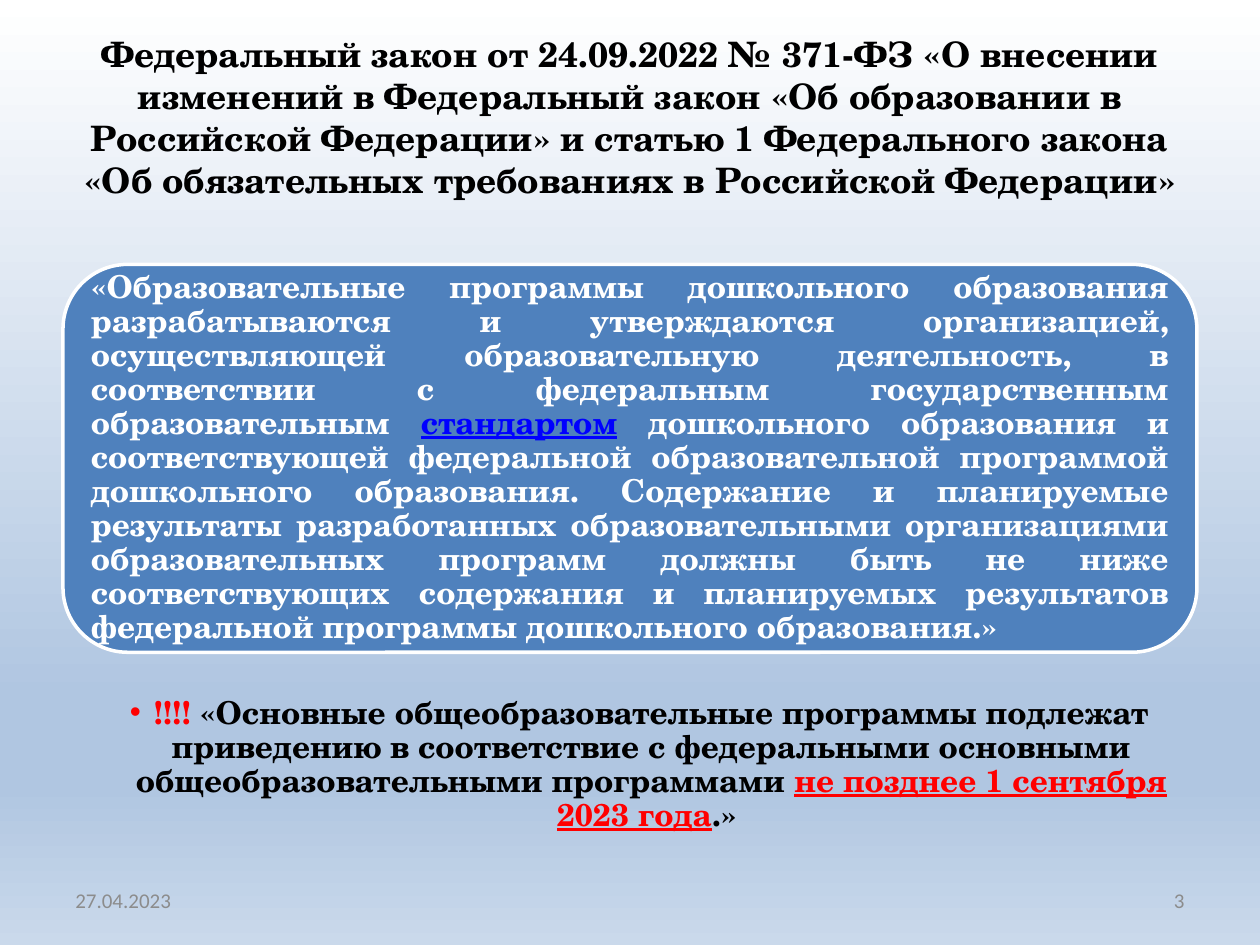
"""Build the slide on the federal law about preschool education programmes."""
from dataclasses import dataclass
from typing import Optional

import lxml.etree
import pptx
import pptx.dml.color
import pptx.enum.shapes
import pptx.enum.text
import pptx.oxml.ns
import pptx.util

Cm = pptx.util.Cm
Pt = pptx.util.Pt
Align = pptx.enum.text.PP_ALIGN
Anchor = pptx.enum.text.MSO_ANCHOR


@dataclass(frozen=True)
class Theme:
    """Colours, fonts and type sizes of the slide."""
    ink: str = "000000"
    white: str = "FFFFFF"
    card: str = "4F81BD"
    link: str = "0000FF"
    alert: str = "FF0000"
    muted: str = "8C8C8C"
    serif: str = "TeX Gyre Schola"
    sans: str = "Calibri"
    title_size: int = 20
    body_size: int = 18
    footer_size: int = 12
    backdrop: tuple = ((0, "FFFFFF"), (74, "B0C6E1"), (83, "B0C6E1"), (100, "CAD9EB"))


THEME = Theme()


@dataclass(frozen=True)
class Piece:
    """A stretch of text in one colour."""
    text: str
    color: str
    underline: bool = False


@dataclass(frozen=True)
class Block:
    """A placed paragraph; lengths in centimetres, insets as left, top, right, bottom."""
    box: tuple[float, float, float, float]
    pieces: tuple[Piece, ...]
    size: int
    align: Align
    font: str = THEME.serif
    bold: bool = True
    anchor: Anchor = Anchor.MIDDLE
    insets: tuple[float, float, float, float] = (0.25, 0.13, 0.25, 0.13)
    spacing: float = 1.0
    fill: Optional[str] = None
    bullet_indent: Optional[float] = None


MARGIN, WIDTH = 1.27, 22.86
FOOTER_TOP, FOOTER_WIDTH, FOOTER_HEIGHT = 17.65, 5.93, 1.01

TITLE = Block(
    (MARGIN, 0.76, WIDTH, 3.18),
    (Piece("Федеральный закон от 24.09.2022 № 371-ФЗ «О внесении изменений в Федеральный "
           "закон «Об образовании в Российской Федерации» и статью 1 Федерального закона "
           "«Об обязательных требованиях в Российской Федерации»", THEME.ink),),
    THEME.title_size, Align.CENTER)

QUOTE = Block(
    (MARGIN, 5.33, WIDTH, 7.82),
    (Piece("«Образовательные программы дошкольного образования разрабатываются и утверждаются "
           "организацией, осуществляющей образовательную деятельность, в соответствии с "
           "федеральным государственным образовательным ", THEME.white),
     Piece("стандартом", THEME.link, True),
     Piece(" дошкольного образования и соответствующей федеральной образовательной программой "
           "дошкольного образования. Содержание и планируемые результаты разработанных "
           "образовательными организациями образовательных программ должны быть не ниже "
           "соответствующих содержания и планируемых результатов федеральной программы "
           "дошкольного образования.»", THEME.white)),
    THEME.body_size, Align.JUSTIFY, insets=(0.18,) * 4, spacing=0.9, fill=THEME.card)

DEADLINE = Block(
    (MARGIN, 13.97, WIDTH, 2.9),
    (Piece("!!!! ", THEME.alert),
     Piece("«Основные общеобразовательные программы подлежат приведению в соответствие с "
           "федеральными основными общеобразовательными программами ", THEME.ink),
     Piece("не позднее 1 сентября 2023 года", THEME.alert, True),
     Piece(".» ", THEME.ink)),
    THEME.body_size, Align.CENTER, anchor=Anchor.TOP, insets=(0.74, 0.08, 0.36, 0.08),
    spacing=0.9, bullet_indent=0.48)


def footer(left: float, text: str, align: Align) -> Block:
    """Describe a small grey footer entry."""
    return Block((left, FOOTER_TOP, FOOTER_WIDTH, FOOTER_HEIGHT), (Piece(text, THEME.muted),),
                 THEME.footer_size, align, font=THEME.sans, bold=False)


BLOCKS = (
    TITLE, QUOTE, DEADLINE,
    footer(MARGIN, "27.04.2023", Align.LEFT),
    footer(MARGIN + WIDTH - FOOTER_WIDTH, "3", Align.RIGHT),
)


def rgb(value: str) -> pptx.dml.color.RGBColor:
    """Turn a hex string into a colour."""
    return pptx.dml.color.RGBColor.from_string(value)


def paint_backdrop(slide: pptx.slide.Slide) -> None:
    """Fill the slide background with the vertical gradient."""
    fill = slide.background.fill
    fill.gradient()
    fill.gradient_angle = 270
    qn = pptx.oxml.ns.qn
    stops = slide.element.find(".//" + qn("a:gsLst"))
    for stop in list(stops):
        stops.remove(stop)
    for percent, color in THEME.backdrop:
        stop = lxml.etree.SubElement(stops, qn("a:gs"), pos=str(percent * 1000))
        lxml.etree.SubElement(stop, qn("a:srgbClr"), val=color)


def add_bullet(paragraph: pptx.text.text._Paragraph, indent: float) -> None:
    """Give the paragraph a hanging round bullet."""
    qn = pptx.oxml.ns.qn
    properties = paragraph._p.get_or_add_pPr()
    properties.set("marL", str(Cm(indent)))
    properties.set("indent", str(-Cm(indent)))
    lxml.etree.SubElement(properties, qn("a:buFont"), typeface="Arial")
    lxml.etree.SubElement(properties, qn("a:buChar"), char="•")


def draw_block(slide: pptx.slide.Slide, block: Block) -> None:
    """Draw a text block, on a rounded card when it has a fill."""
    box = [Cm(length) for length in block.box]
    if block.fill:
        holder = slide.shapes.add_shape(
            pptx.enum.shapes.MSO_SHAPE.ROUNDED_RECTANGLE, *box)
        holder.shadow.inherit = False
        holder.fill.solid()
        holder.fill.fore_color.rgb = rgb(block.fill)
        holder.line.color.rgb = rgb(THEME.white)
        holder.line.width = Pt(2)
    else:
        holder = slide.shapes.add_textbox(*box)
    frame = holder.text_frame
    frame.word_wrap = True
    frame.vertical_anchor = block.anchor
    (frame.margin_left, frame.margin_top,
     frame.margin_right, frame.margin_bottom) = [Cm(inset) for inset in block.insets]
    paragraph = frame.paragraphs[0]
    paragraph.alignment = block.align
    paragraph.line_spacing = block.spacing
    if block.bullet_indent:
        add_bullet(paragraph, block.bullet_indent)
    for piece in block.pieces:
        run = paragraph.add_run()
        run.text = piece.text
        run.font.name = block.font
        run.font.size = Pt(block.size)
        run.font.bold = block.bold
        run.font.underline = piece.underline
        run.font.color.rgb = rgb(piece.color)


def main() -> None:
    """Build and save the presentation."""
    deck = pptx.Presentation()
    deck.slide_width, deck.slide_height = Cm(25.4), Cm(19.05)
    slide = deck.slides.add_slide(deck.slide_layouts[6])
    paint_backdrop(slide)
    for block in BLOCKS:
        draw_block(slide, block)
    deck.save("out.pptx")


if __name__ == "__main__":
    main()
